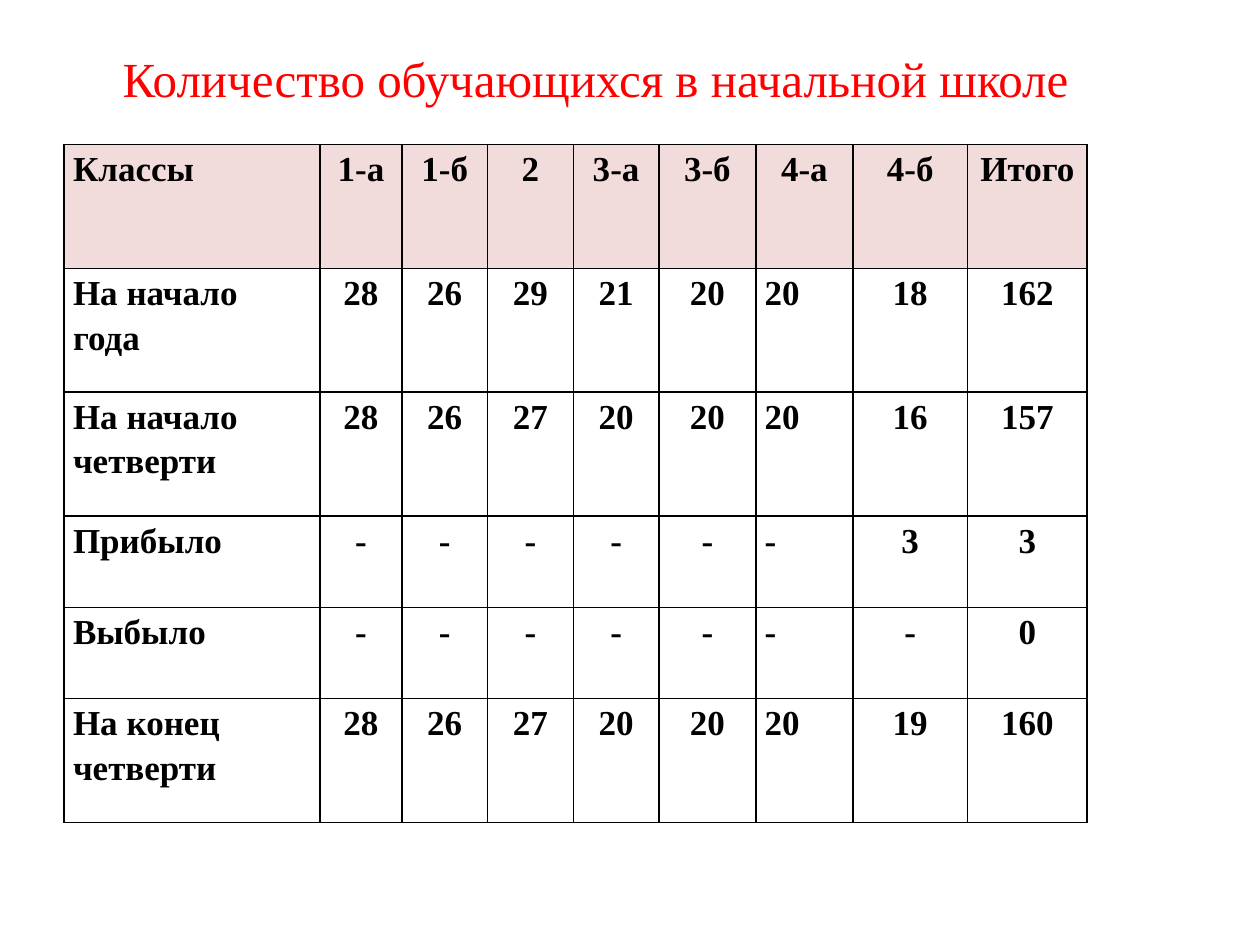
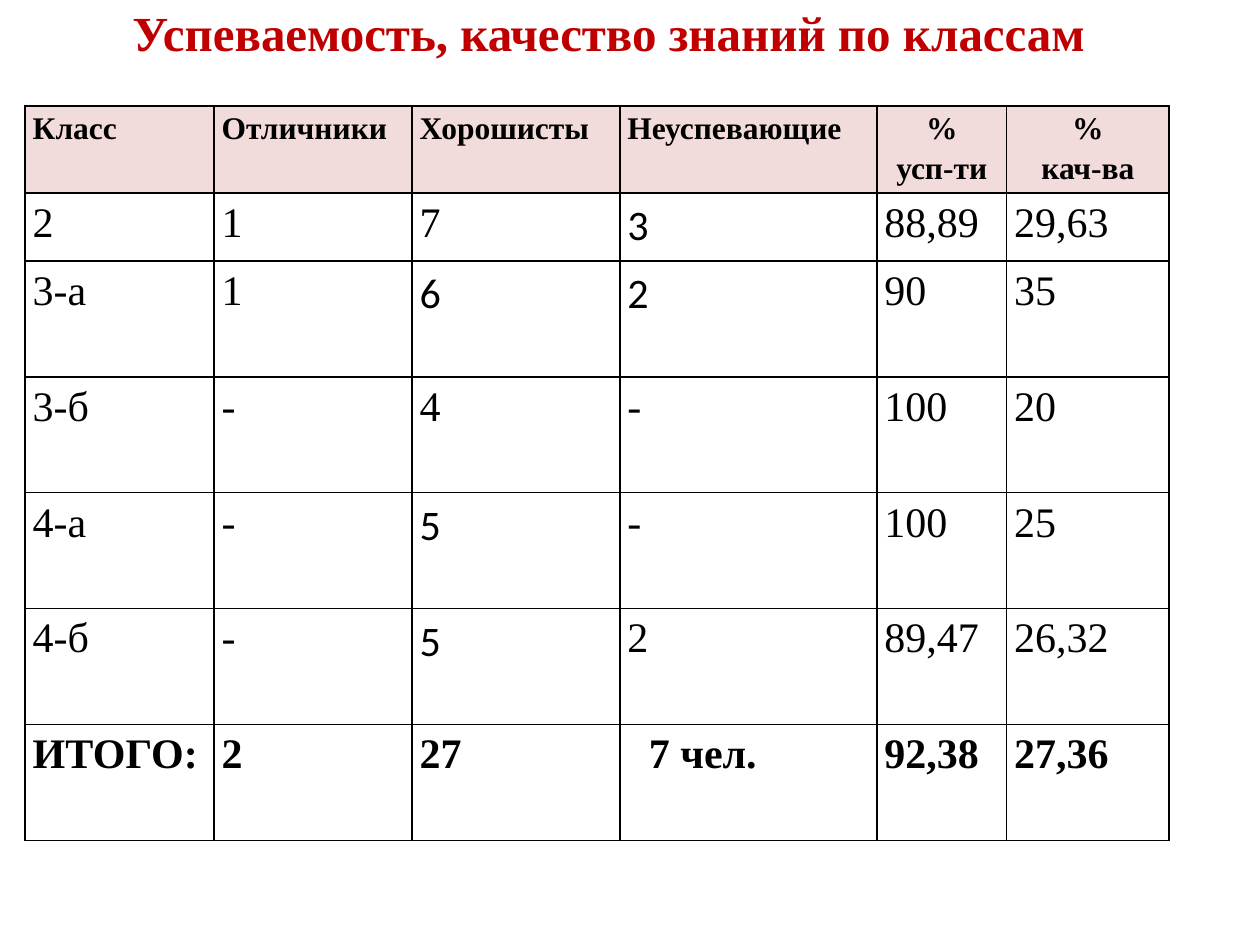
"""Build two slides of school statistics: pupil numbers and class results."""
from lxml import etree
from pptx import Presentation
from pptx import util as u
from pptx.dml.color import RGBColor
from pptx.enum import text
from pptx.oxml import ns

COLORS = {
    "title_red": "FF0000",
    "title_dark_red": "C00000",
    "header": "F2DBDB",
    "ink": "000000",
}
SERIF, SANS = "Times New Roman", "Calibri"
SLIDE_WIDTH, SLIDE_HEIGHT = u.Inches(10), u.Inches(7.5)

PUPIL_ROWS = [
    ["Классы", "1-а", "1-б", "2", "3-а", "3-б", "4-а", "4-б", "Итого"],
    ["На начало года", "28", "26", "29", "21", "20", "20", "18", "162"],
    ["На начало\nчетверти", "28", "26", "27", "20", "20", "20", "16", "157"],
    ["Прибыло", "-", "-", "-", "-", "-", "-", "3", "3"],
    ["Выбыло", "-", "-", "-", "-", "-", "-", "-", "0"],
    ["На конец четверти", "28", "26", "27", "20", "20", "20", "19", "160"],
]
RESULT_ROWS = [
    ["Класс", "Отличники", "Хорошисты", "Неуспевающие", "%\nусп-ти", "%\nкач-ва"],
    ["2", "1", "7", "3", "88,89", "29,63"],
    ["3-а", "1", "6", "2", "90", "35"],
    ["3-б", "-", "4", "-", "100", "20"],
    ["4-а", "-", "5", "-", "100", "25"],
    ["4-б", "-", "5", "2", "89,47", "26,32"],
    ["ИТОГО:", "2", "27", "7 чел.", "92,38", "27,36"],
]
SANS_RESULTS = {(1, 3), (2, 2), (2, 3), (4, 2), (5, 2)}


def across(percent):
    """Return a percentage of the slide width."""
    return round(SLIDE_WIDTH * percent / 100)


def down(percent):
    """Return a percentage of the slide height."""
    return round(SLIDE_HEIGHT * percent / 100)


def set_font(paragraph, size, color, bold=False, name=SERIF):
    """Set the font of a whole paragraph."""
    font = paragraph.font
    font.name, font.size, font.bold = name, u.Pt(size), bold
    font.color.rgb = RGBColor.from_string(COLORS[color])


def add_title(slide, title, left, top, width, color, bold=False):
    """Add a centred one-line slide title."""
    shape = slide.shapes.add_textbox(across(left), down(top), across(width), down(7.6))
    frame = shape.text_frame
    frame.word_wrap = False
    frame.auto_size = text.MSO_AUTO_SIZE.SHAPE_TO_FIT_TEXT
    frame.vertical_anchor = text.MSO_ANCHOR.MIDDLE
    frame.text = title
    paragraph = frame.paragraphs[0]
    paragraph.alignment = text.PP_ALIGN.CENTER
    set_font(paragraph, 28, color, bold)


def add_borders(cell):
    """Draw a thin line on all four sides of a cell."""
    properties = cell._tc.get_or_add_tcPr()
    for index, side in enumerate(("a:lnL", "a:lnR", "a:lnT", "a:lnB")):
        line = etree.Element(ns.qn(side), w=str(u.Pt(1)))
        fill = etree.SubElement(line, ns.qn("a:solidFill"))
        etree.SubElement(fill, ns.qn("a:srgbClr"), val=COLORS["ink"])
        properties.insert(index, line)


def add_grid(slide, rows, left, top, widths, heights, inset, style):
    """Add a table whose style function gives alignment and font per cell."""
    frame = slide.shapes.add_table(
        len(rows), len(widths), across(left), down(top),
        across(sum(widths)), down(sum(heights)))
    table = frame.table
    table.first_row = table.horz_banding = False
    for column, width in zip(table.columns, widths):
        column.width = across(width)
    for row, height in zip(table.rows, heights):
        row.height = down(height)
    for row, values in enumerate(rows):
        for column, value in enumerate(values):
            cell = table.cell(row, column)
            cell.text = value
            cell.margin_left = cell.margin_right = u.Inches(inset)
            cell.margin_top = cell.margin_bottom = 0
            if row == 0:
                cell.fill.solid()
                cell.fill.fore_color.rgb = RGBColor.from_string(COLORS["header"])
            else:
                cell.fill.background()
            add_borders(cell)
            centered, size, bold, name = style(row, column)
            for paragraph in cell.text_frame.paragraphs:
                paragraph.line_spacing = 1.15
                paragraph.alignment = (
                    text.PP_ALIGN.CENTER if centered else text.PP_ALIGN.LEFT)
                set_font(paragraph, size, "ink", bold, name)
    return table


def pupil_style(row, column):
    """Centre the numbers, except those of class 4-а."""
    centered = column > 0 and (row == 0 or column != 6)
    return centered, 20, True, SERIF


def result_style(row, column):
    """Make the header and the total row bold."""
    last = len(RESULT_ROWS) - 1
    name = SANS if (row, column) in SANS_RESULTS else SERIF
    return row == 0 and column >= 4, 24 if row else 18, row in (0, last), name


def add_pupils_slide(presentation):
    """Add the slide with pupil numbers."""
    slide = presentation.slides.add_slide(presentation.slide_layouts[6])
    add_title(slide, "Количество обучающихся в начальной школе",
              8.3, 4.4, 77.9, "title_red")
    add_grid(slide, PUPIL_ROWS, 5.1, 15.3,
             [20.3, 6.5] + [6.8] * 3 + [7.7] * 2 + [9.1, 9.5],
             [13.1] * 3 + [9.67] * 2 + [13.1], 0.07, pupil_style)


def add_results_slide(presentation):
    """Add the slide with results by class."""
    slide = presentation.slides.add_slide(presentation.slide_layouts[6])
    add_title(slide, "Успеваемость, качество знаний по классам",
              9.1, -0.4, 78.4, "title_dark_red", True)
    table = add_grid(slide, RESULT_ROWS, 2, 11.2,
                     [15, 15.7, 16.5, 20.4, 10.3, 12.9],
                     [9.2, 7.2] + [12.27] * 5, 0.06, result_style)
    table.cell(len(RESULT_ROWS) - 1, 3).margin_left = u.Inches(0.23)


def main():
    """Build and save the presentation."""
    presentation = Presentation()
    presentation.slide_width, presentation.slide_height = SLIDE_WIDTH, SLIDE_HEIGHT
    add_pupils_slide(presentation)
    add_results_slide(presentation)
    presentation.save("out.pptx")


if __name__ == "__main__":
    main()
